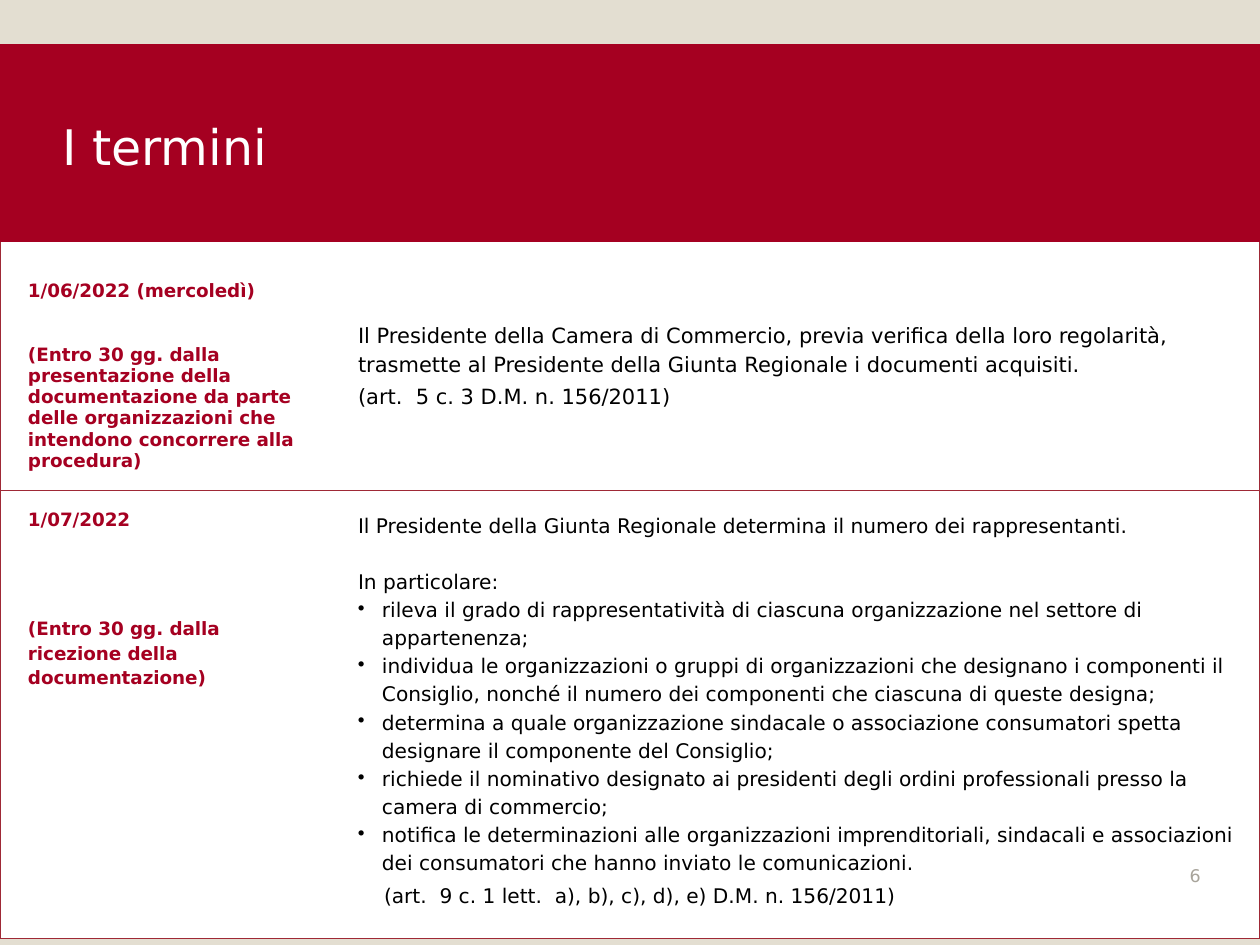
"""Build the slide on the deadlines of the procedure."""
import lxml.etree
import pptx
import pptx.dml.color
import pptx.enum.shapes
import pptx.enum.text
import pptx.oxml
import pptx.oxml.ns
import pptx.util

FONT = "DejaVu Sans"
COLORS = {
    "background": "E3DED1",
    "header": "A50021",
    "border": "9F2936",
    "white": "FFFFFF",
    "body": "000000",
    "number": "A8A49B",
}
DATE_SPACING = pptx.util.Pt(12.1)
BULLETS = [
    "rileva il grado di rappresentatività di ciascuna organizzazione nel settore di appartenenza;",
    "individua le organizzazioni o gruppi di organizzazioni che designano i componenti il Consiglio, "
    "nonché il numero dei componenti che ciascuna di queste designa;",
    "determina a quale organizzazione sindacale o associazione consumatori spetta designare il "
    "componente del Consiglio;",
    "richiede il nominativo designato ai presidenti degli ordini professionali presso la camera di commercio;",
    "notifica le determinazioni alle organizzazioni imprenditoriali, sindacali e associazioni dei "
    "consumatori che hanno inviato le comunicazioni.",
]


def px(length):
    """Turn pixels into EMU."""
    return pptx.util.Emu(round(length * 914400 / 126))


def rgb(name):
    """Return a named colour."""
    return pptx.dml.color.RGBColor.from_string(COLORS[name])


def format_runs(paragraph, size, color, bold=False):
    """Set the font of every run of a paragraph."""
    for run in paragraph.runs:
        run.font.name = FONT
        run.font.size = pptx.util.Pt(size)
        run.font.bold = bold
        run.font.color.rgb = rgb(color)


def indent(paragraph, left, first=0, bullet=None):
    """Set the indents of a paragraph and its bullet."""
    properties = paragraph._p.get_or_add_pPr()
    properties.set("marL", str(px(left)))
    properties.set("indent", str(px(first)))
    if bullet:
        mark = lxml.etree.SubElement(properties, pptx.oxml.ns.qn("a:buChar"))
        mark.set("char", bullet)


def add_band(slide):
    """Add the coloured band behind the title."""
    shape = slide.shapes.add_shape(
        pptx.enum.shapes.MSO_SHAPE.RECTANGLE, px(0), px(45), px(1260), px(196))
    shape.shadow.inherit = False
    shape.fill.solid()
    shape.fill.fore_color.rgb = rgb("header")
    shape.line.color.rgb = rgb("header")
    shape.line.width = pptx.util.Pt(0.75)


def add_label(slide, box, text, size, color, align, anchor):
    """Add a one-line text box."""
    text_frame = slide.shapes.add_textbox(*map(px, box)).text_frame
    text_frame.word_wrap = True
    text_frame.vertical_anchor = anchor
    text_frame.text = text
    paragraph = text_frame.paragraphs[0]
    paragraph.alignment = align
    format_runs(paragraph, size, color)


def set_borders(cell, sides):
    """Draw the given sides of a cell."""
    properties = cell._tc.get_or_add_tcPr()
    for position, side in enumerate(sides):
        line = pptx.oxml.parse_xml(
            f'<a:ln{side} {pptx.oxml.ns.nsdecls("a")} w="12700"><a:solidFill>'
            f'<a:srgbClr val="{COLORS["border"]}"/></a:solidFill></a:ln{side}>')
        properties.insert(position, line)


def fill_cell(cell, sides, top, paragraphs, size, color, bold):
    """Fill a cell with (text, line spacing, space before, indents) paragraphs."""
    cell.margin_left = cell.margin_right = cell.margin_bottom = px(19)
    cell.margin_top = px(top)
    cell.fill.solid()
    cell.fill.fore_color.rgb = rgb("white")
    set_borders(cell, sides)
    text_frame = cell.text_frame
    for number, (text, spacing, before, indents) in enumerate(paragraphs):
        paragraph = text_frame.add_paragraph() if number else text_frame.paragraphs[0]
        paragraph.text = text
        paragraph.line_spacing = spacing
        paragraph.space_before = pptx.util.Pt(before)
        indent(paragraph, *indents)
        format_runs(paragraph, size, color, bold)


def add_deadlines(slide):
    """Add the table of dates and duties."""
    table = slide.shapes.add_table(2, 2, px(0), px(241), px(1260), px(697)).table
    table.first_row = table.horz_banding = False
    for column, width in zip(table.columns, (329, 931)):
        column.width = px(width)
    for row, height in zip(table.rows, (249, 448)):
        row.height = px(height)
    dates = [
        (40, [("1/06/2022 (mercoledì)", DATE_SPACING, 0, (9,)),
              ("(Entro 30 gg. dalla presentazione della documentazione da parte delle organizzazioni "
               "che intendono concorrere alla procedura)", DATE_SPACING, 24.2, (9,))]),
        (19, [("1/07/2022", DATE_SPACING, 0, (9,)),
              ("(Entro 30 gg. dalla ricezione della documentazione)", 1.15, 48.4, (9,))]),
    ]
    duties = [
        (78, 12, [("Il Presidente della Camera di Commercio, previa verifica della loro regolarità, "
                   "trasmette al Presidente della Giunta Regionale i documenti acquisiti.", 1.2, 0, (10,)),
                  ("(art.  5 c. 3 D.M. n. 156/2011)", 1.2, 0.9, (10,))]),
        (19, 11.5, [("Il Presidente della Giunta Regionale determina il numero dei rappresentanti.", 1.2, 0, (10,)),
                    ("In particolare:", 1.2, 16, (10,)),
                    *[(text, 1.2, 0, (34, -24, "•")) for text in BULLETS],
                    ("(art.  9 c. 1 lett.  a), b), c), d), e) D.M. n. 156/2011)", 1.2, 2.5, (36,))]),
    ]
    for row, (top, paragraphs) in enumerate(dates):
        fill_cell(table.cell(row, 0), "LTB", top, paragraphs, 10.5, "header", True)
    for row, (top, size, paragraphs) in enumerate(duties):
        fill_cell(table.cell(row, 1), "RTB", top, paragraphs, size, "body", False)


def main():
    """Build and save the presentation."""
    presentation = pptx.Presentation()
    presentation.slide_width, presentation.slide_height = px(1260), px(945)
    slide = presentation.slides.add_slide(presentation.slide_layouts[6])
    slide.background.fill.solid()
    slide.background.fill.fore_color.rgb = rgb("background")
    align, anchor = pptx.enum.text.PP_ALIGN, pptx.enum.text.MSO_ANCHOR
    add_deadlines(slide)
    add_band(slide)
    add_label(slide, (1150, 842, 63, 50), "6", 10, "number", align.RIGHT, anchor.BOTTOM)
    add_label(slide, (50, 110, 1131, 72), "I termini", 28, "white", align.LEFT, anchor.TOP)
    presentation.save("out.pptx")


if __name__ == "__main__":
    main()
